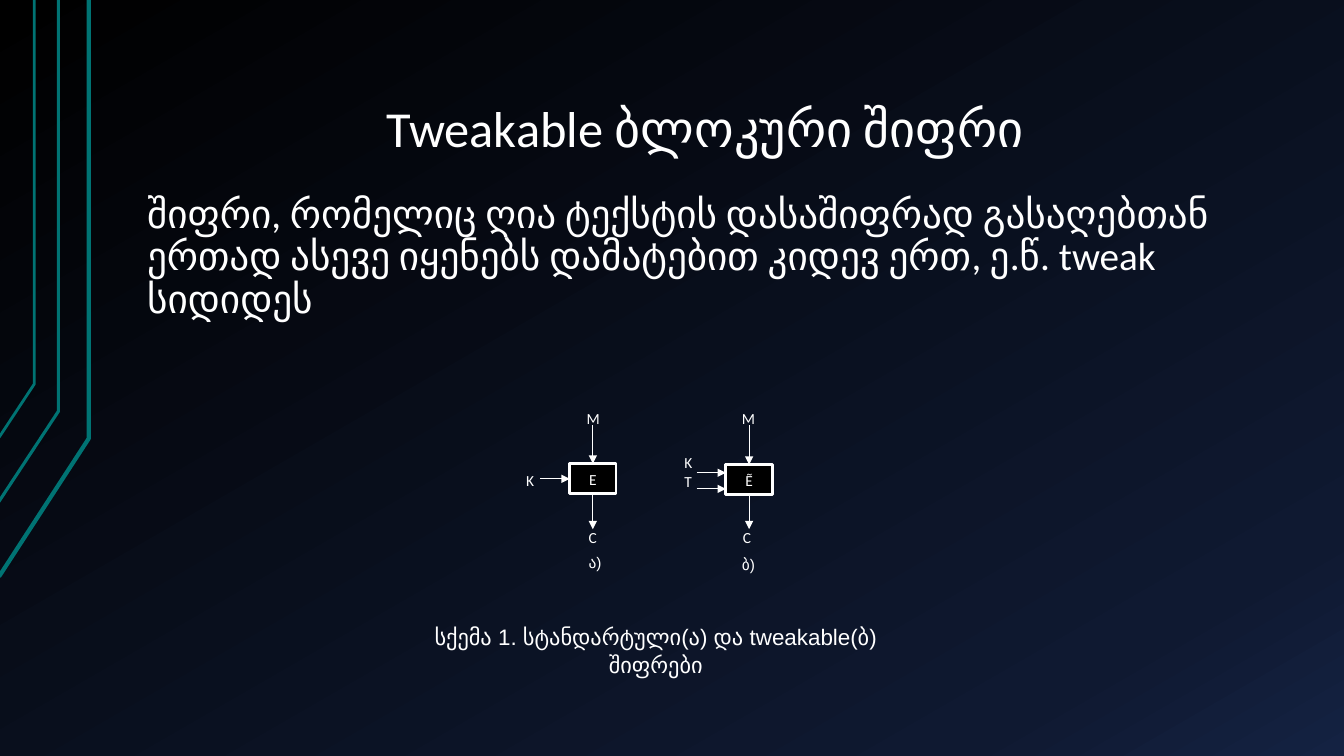
"""Build the slide that compares a standard and a tweakable block cipher."""
from copy import deepcopy

from pptx import Presentation
from pptx.dml.color import RGBColor
from pptx.enum.shapes import MSO_CONNECTOR, MSO_SHAPE
from pptx.enum.text import MSO_ANCHOR, MSO_AUTO_SIZE, PP_ALIGN
from pptx.oxml.ns import qn
from pptx.util import Inches, Pt
from lxml.etree import SubElement


def color(code):
    return RGBColor.from_string(code)


def write(shape, text, size=11, font="Calibri", align=PP_ALIGN.LEFT, anchor=MSO_ANCHOR.TOP,
          lead=1.07, before=0, after=8, pad=(0.1, 0.05)):
    frame = shape.text_frame
    frame.text = text
    frame.word_wrap = True
    frame.auto_size = MSO_AUTO_SIZE.NONE
    frame.vertical_anchor = anchor
    frame.margin_left = frame.margin_right = Inches(pad[0])
    frame.margin_top = frame.margin_bottom = Inches(pad[1])
    for para in frame.paragraphs:
        para.alignment = align
        para.line_spacing = lead
        para.space_before = Pt(before)
        para.space_after = Pt(after)
        for run in para.runs:
            run.font.size = Pt(size)
            run.font.name = font
            run.font.color.rgb = color("FFFFFF")


deck = Presentation()
deck.slide_width = Inches(13.33)
deck.slide_height = Inches(7.5)
slide = deck.slides.add_slide(deck.slide_layouts[5])
shapes = slide.shapes

fill = slide.background.fill
fill.gradient()
fill.gradient_angle = 300
stops = slide.element.xpath(".//a:gsLst")[0]
stops.append(deepcopy(stops[0]))
for stop, (place, code) in zip(fill.gradient_stops, [(0, "000000"), (0.85, "0F1931"), (1, "142242")]):
    stop.position = place
    stop.color.rgb = color(code)

for left, foot, right, bend, width in [
    (-0.01, 5.72, 0.88, 4.35, 3),
    (-0.02, 4.99, 0.58, 4.08, 2.25),
    (-0.01, 4.34, 0.34, 3.81, 2),
]:
    track = shapes.build_freeform(Inches(left), Inches(foot))
    track.add_line_segments([(Inches(right), Inches(bend)), (Inches(right), 0)], close=False)
    trace = track.convert_to_shape()
    trace.shadow.inherit = False
    trace.fill.background()
    trace.line.color.rgb = color("007373")
    trace.line.width = Pt(width)

title = shapes.title
title.left, title.top, title.width, title.height = map(Inches, (1.33, 0.3, 11.33, 1.34))
write(title, "Tweakable ბლოკური შიფრი", size=36, align=PP_ALIGN.CENTER,
      anchor=MSO_ANCHOR.BOTTOM, lead=0.9, after=0, pad=(0.13, 0.07))

body = shapes.add_textbox(*map(Inches, (1.33, 1.86, 11.33, 4.88)))
write(body, "შიფრი, რომელიც ღია ტექსტის დასაშიფრად გასაღებთან ერთად ასევე იყენებს "
      "დამატებით კიდევ ერთ, ე.წ. tweak სიდიდეს",
      size=28, lead=0.9, before=16, after=0, pad=(0.13, 0.07))

arrows = []
for name, left, top, inputs in [
    ("E", 5.65, 4.6, [4.75]),
    ("Ẽ", 7.2, 4.61, [4.69, 4.85]),
]:
    box = shapes.add_shape(MSO_SHAPE.RECTANGLE, *map(Inches, (left, top, 0.46, 0.3)))
    box.shadow.inherit = False
    box.fill.solid()
    box.fill.fore_color.rgb = color("000000")
    box.line.color.rgb = color("FFFFFF")
    box.line.width = Pt(2)
    write(box, name, align=PP_ALIGN.CENTER, anchor=MSO_ANCHOR.MIDDLE)

    mid = left + 0.23
    ends = [(mid, 4.22, mid, top), (mid, top + 0.3, mid, 5.25)]
    ends += [(left - 0.29, y, left, y) for y in inputs]
    lines = [shapes.add_connector(MSO_CONNECTOR.STRAIGHT, *map(Inches, end)) for end in ends]
    lines[0].end_connect(box, 0)
    lines[1].begin_connect(box, 2)
    if len(inputs) == 1:
        lines[2].end_connect(box, 1)
    arrows += lines

for arrow in arrows:
    arrow.line.color.rgb = color("FFFFFF")
    arrow.line.width = Pt(0.75)
    SubElement(arrow.line._get_or_add_ln(), qn("a:tailEnd"), type="triangle")
    SubElement(arrow.element.spPr, qn("a:effectLst"))

for text, left, top, width, font in [
    ("M", 5.72, 4, 0.4, "Calibri"),
    ("K", 5.12, 4.61, 0.22, "Calibri"),
    ("C", 5.74, 5.18, 0.3, "Calibri"),
    ("ა)", 5.74, 5.43, 0.4, "Arial"),
    ("M", 7.26, 4, 0.4, "Calibri"),
    ("C", 7.27, 5.18, 0.3, "Calibri"),
    ("ბ)", 7.26, 5.45, 0.4, "Arial"),
]:
    label = shapes.add_textbox(*map(Inches, (left, top, width, 0.31)))
    write(label, text, font=font)

keys = shapes.add_textbox(*map(Inches, (6.69, 4.43, 0.22, 0.5)))
write(keys, "K\nT", after=0)

note = shapes.add_textbox(*map(Inches, (4.08, 6.11, 4.85, 0.6)))
write(note, "სქემა 1. სტანდარტული(ა) და tweakable(ბ) შიფრები",
      size=16, font="Arial", align=PP_ALIGN.CENTER)

deck.save("out.pptx")
